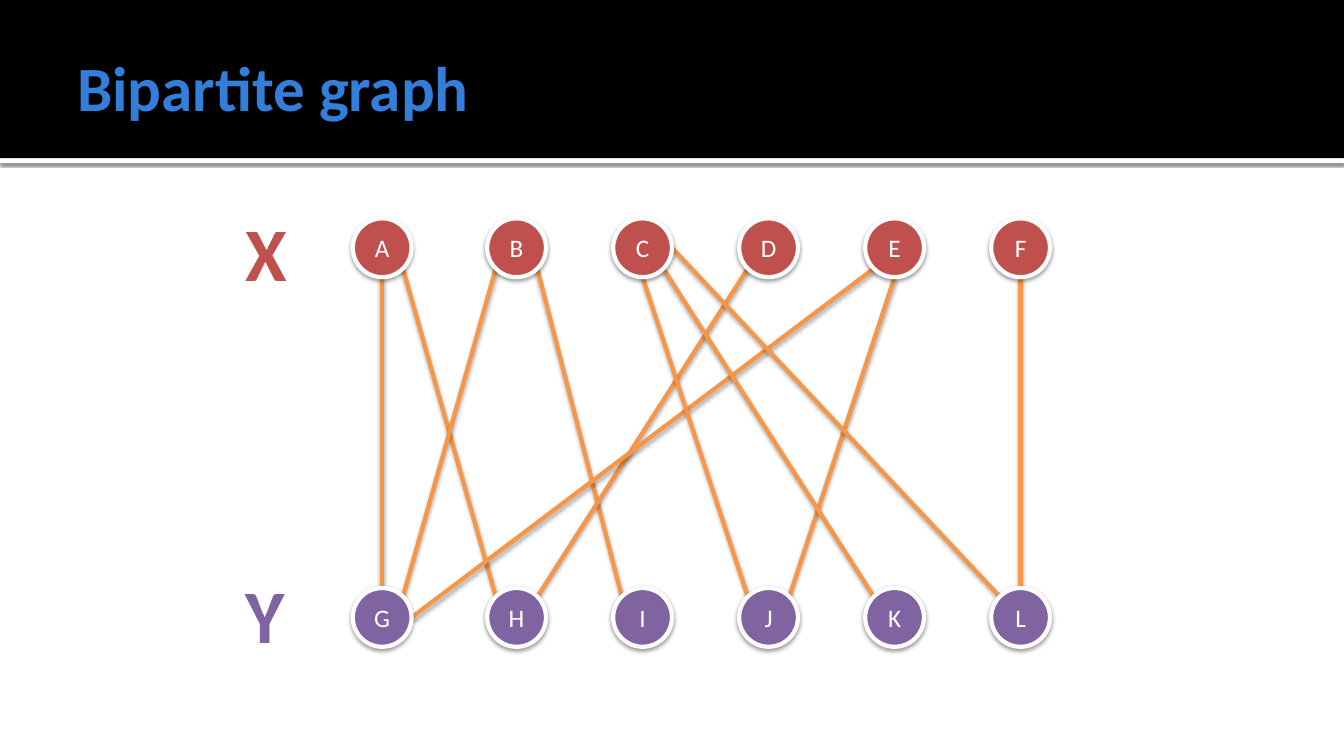
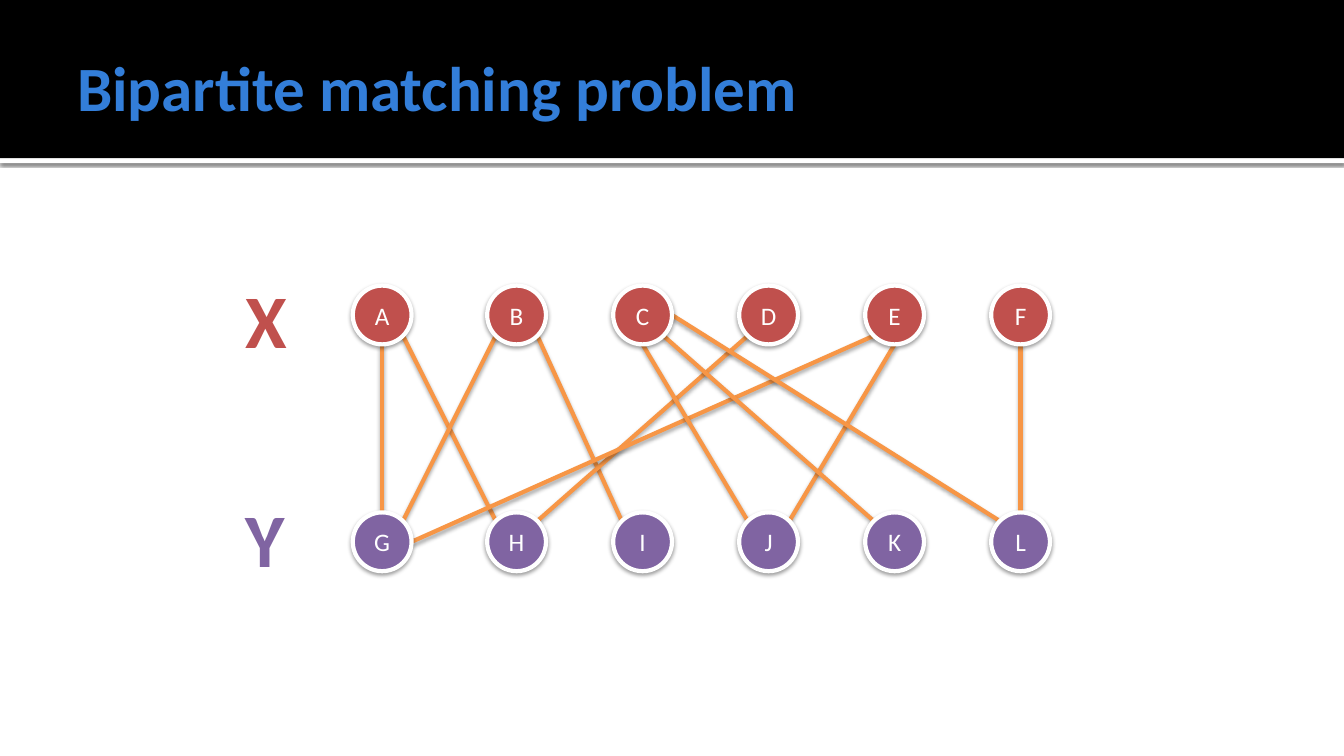
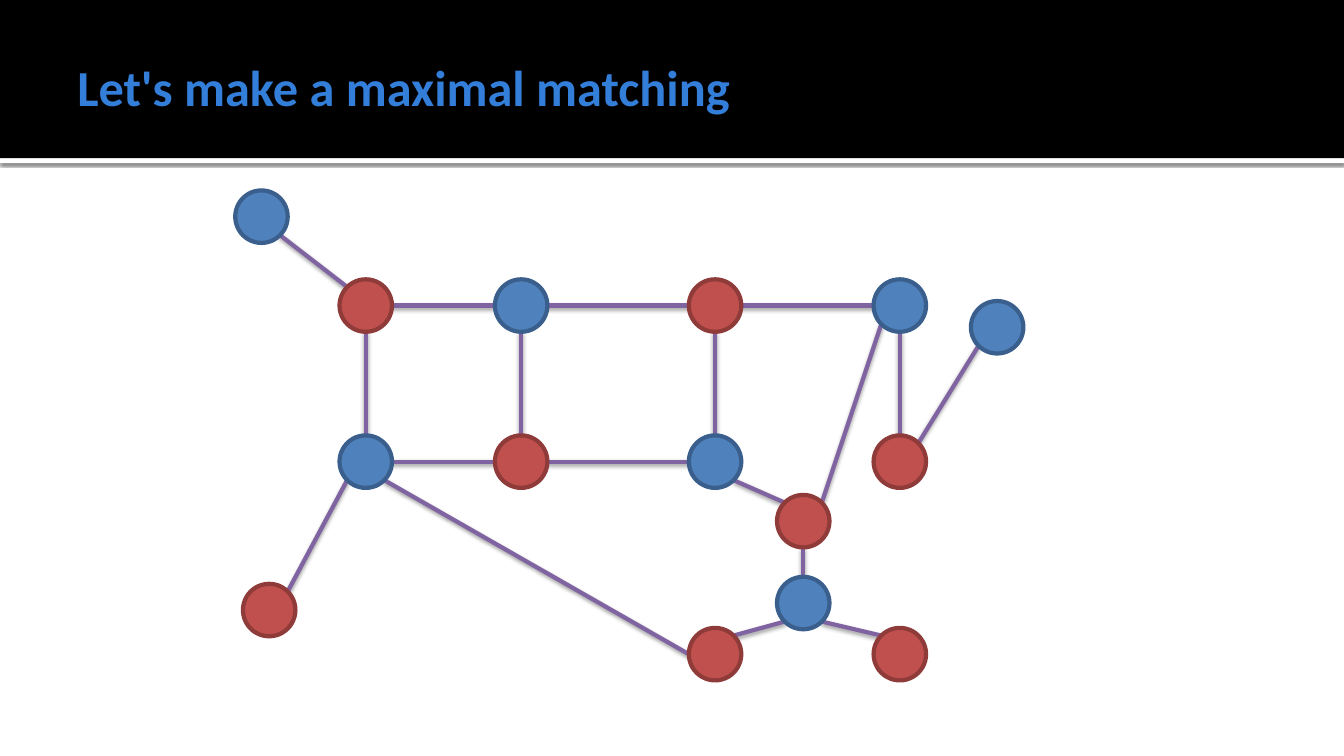
from lxml.etree import SubElement
from pptx import Presentation
from pptx.dml.color import RGBColor
from pptx.enum.shapes import MSO_CONNECTOR as Conn, MSO_SHAPE as Form
from pptx.enum.text import MSO_ANCHOR as Anchor, MSO_AUTO_SIZE as Auto, PP_ALIGN as Align
from pptx.oxml.ns import qn
from pptx.util import Pt

HEX = {
    "white": "FFFFFF", "black": "000000", "title": "337ED9",
    "red": "C0504D", "purple": "8064A2", "blue": "4F81BD", "orange": "F79646",
    "red rim": "8E3B39", "blue rim": "3A5F8C",
}
FONT = "Calibri"
WIDE, HIGH = 960, 540
BAND = 113
RULE = 3.6
STROKE = 3

# Shadows: opacity in percent, blur and distance in points
RULE_SHADE = (60, 2.5, 0.8)
NODE_SHADE = (38, 3.1, 1.6)
EDGE_SHADE = (35, 3.1, 1.8)

# Points on a circle, as shares of its radius from the centre
DIAG = 0.5 ** 0.5
SITES = {
    "n": (0, -1), "s": (0, 1), "w": (-1, 0), "e": (1, 0),
    "nw": (-DIAG, -DIAG), "ne": (DIAG, -DIAG),
    "sw": (-DIAG, DIAG), "se": (DIAG, DIAG),
}

PAIR_EDGES = (
    "A s G n", "A se H nw", "G ne B sw", "B se I nw", "H ne D sw", "G e E sw",
    "E s J ne", "C s J nw", "C se K nw", "C e L nw", "L n F s",
)
WEB_NODES = {
    "a": (0, 0, "blue"), "b": (74.5, 63.5, "red"), "c": (185.5, 63.5, "blue"),
    "d": (324, 63.5, "red"), "e": (456, 63.5, "blue"), "f": (525.5, 79, "blue"),
    "g": (74.5, 175, "blue"), "h": (185.5, 175, "red"), "i": (324, 175, "blue"),
    "j": (456, 175, "red"), "k": (387, 217.5, "red"), "l": (387, 276, "blue"),
    "m": (5.5, 281, "red"), "n": (324, 312.5, "red"), "o": (456, 312.5, "red"),
}
WEB_EDGES = (
    "a se b nw", "i se k nw", "e sw k ne", "l sw n ne", "o nw l se", "b s g n",
    "b e c w", "c s h n", "g e h w", "c e d w", "h e i w", "g se n w",
    "m ne g sw", "j ne f sw", "k s l n", "i n d s", "j n e s", "d e e w",
)


def color(name):
    return RGBColor.from_string(HEX[name])


def style(para, size, tint, bold=False):
    for run in para.runs:
        font = run.font
        font.name, font.size, font.bold = FONT, Pt(size), bold
        font.color.rgb = color(tint)


def shade(item, alpha, blur, dist):
    """Give a shape or connector a shadow that falls straight down."""
    props = item.element.spPr
    fx = props.find(qn("a:effectLst"))
    if fx is None:
        fx = SubElement(props, qn("a:effectLst"))
    cast = SubElement(fx, qn("a:outerShdw"), blurRad=str(Pt(blur)),
                      dist=str(Pt(dist)), dir="5400000", rotWithShape="0")
    tone = SubElement(cast, qn("a:srgbClr"), val=HEX["black"])
    SubElement(tone, qn("a:alpha"), val=str(alpha * 1000))


def block(shapes, form, box, fill, rim=None):
    shape = shapes.add_shape(form, *map(Pt, box))
    shape.shadow.inherit = False
    shape.fill.solid()
    shape.fill.fore_color.rgb = color(fill)
    if rim:
        shape.line.color.rgb = color(rim)
        shape.line.width = Pt(STROKE)
    else:
        shape.line.fill.background()
    return shape


def theme(prs):
    """Put the bands on the master and set the title box of the layout."""
    layout = prs.slide_layouts[5]
    title = layout.placeholders[0]
    title.left, title.top, title.width, title.height = map(Pt, (48, 12, 864, 99))
    frame = title.text_frame
    frame.auto_size = Auto.NONE
    frame.vertical_anchor = Anchor.MIDDLE
    frame.margin_left = Pt(7.2)
    frame.margin_right = frame.margin_top = frame.margin_bottom = Pt(3.6)
    return layout


def bands(slide, master):
    """Draw the bands with the slide's tools, then move them to the master."""
    rule = block(slide.shapes, Form.RECTANGLE, (0, BAND, WIDE, RULE), "white")
    shade(rule, *RULE_SHADE)
    band = block(slide.shapes, Form.RECTANGLE, (0, 0, WIDE, BAND), "black")
    for spot, shape in enumerate((rule, band), 2):
        master.shapes.element.insert(spot, shape.element)


def page(prs, layout, text, size=45):
    slide = prs.slides.add_slide(layout)
    slide.shapes.title.text_frame.text = text
    para = slide.shapes.title.text_frame.paragraphs[0]
    para.alignment = Align.LEFT
    style(para, size, "title", True)
    return slide


def join(shapes, edges, spots, size, tint, cast):
    """Draw edges such as "A s G n" between circles with the given corners."""
    def point(name, site):
        return [Pt(side + size / 2 * (1 + share))
                for side, share in zip(spots[name], SITES[site])]

    for edge in edges:
        tail, out, head, into = edge.split()
        line = shapes.add_connector(Conn.STRAIGHT, *point(tail, out), *point(head, into))
        line.line.color.rgb = color(tint)
        line.line.width = Pt(STROKE)
        shade(line, *cast)


def label(shapes, text, left, top, tint):
    box = shapes.add_textbox(*map(Pt, (left, top, 66, 72.7)))
    frame = box.text_frame
    frame.word_wrap = True
    frame.auto_size = Auto.SHAPE_TO_FIT_TEXT
    frame.text = text
    style(frame.paragraphs[0], 54, tint, True)


def pairs(slide, left, top, drop):
    """Draw the two-row graph; drop is the distance between its rows."""
    size = 42
    cols = [left + 84] + [left + 180 + 90 * n for n in range(5)]
    rows = (("X", "ABCDEF", top, 12.7, "red"),
            ("Y", "GHIJKL", top + drop, 18, "purple"))
    spots = {name: (x, y) for _, names, y, _, _ in rows
             for name, x in zip(names, cols)}
    join(slide.shapes, PAIR_EDGES, spots, size, "orange", EDGE_SHADE)
    for head, names, y, rise, tint in rows:
        for name in names:
            node = block(slide.shapes, Form.OVAL, (*spots[name], size, size), tint, "white")
            shade(node, *NODE_SHADE)
            frame = node.text_frame
            frame.margin_left = frame.margin_right = 0
            frame.vertical_anchor = Anchor.MIDDLE
            frame.text = name
            frame.paragraphs[0].alignment = Align.CENTER
            style(frame.paragraphs[0], 18, "white")
        label(slide.shapes, head, left, y - rise, tint)


def web(slide, left, top):
    """Draw the two-colour network as one group."""
    size = 37.5
    group = slide.shapes.add_group_shape().shapes
    spots = {name: (left + x, top + y) for name, (x, y, _) in WEB_NODES.items()}
    join(group, WEB_EDGES, spots, size, "purple", NODE_SHADE)
    for name, (_, _, tint) in WEB_NODES.items():
        block(group, Form.OVAL, (*spots[name], size, size), tint, tint + " rim")


def main():
    prs = Presentation()
    prs.slide_width, prs.slide_height = Pt(WIDE), Pt(HIGH)
    layout = theme(prs)
    graph = page(prs, layout, "Bipartite graph")
    bands(graph, prs.slide_master)
    pairs(graph, 168, 156, 264)
    pairs(page(prs, layout, "Bipartite matching problem"), 168, 204, 162)
    web(page(prs, layout, "Let's make a maximal matching", 36), 168, 136)
    prs.save("out.pptx")


if __name__ == "__main__":
    main()
